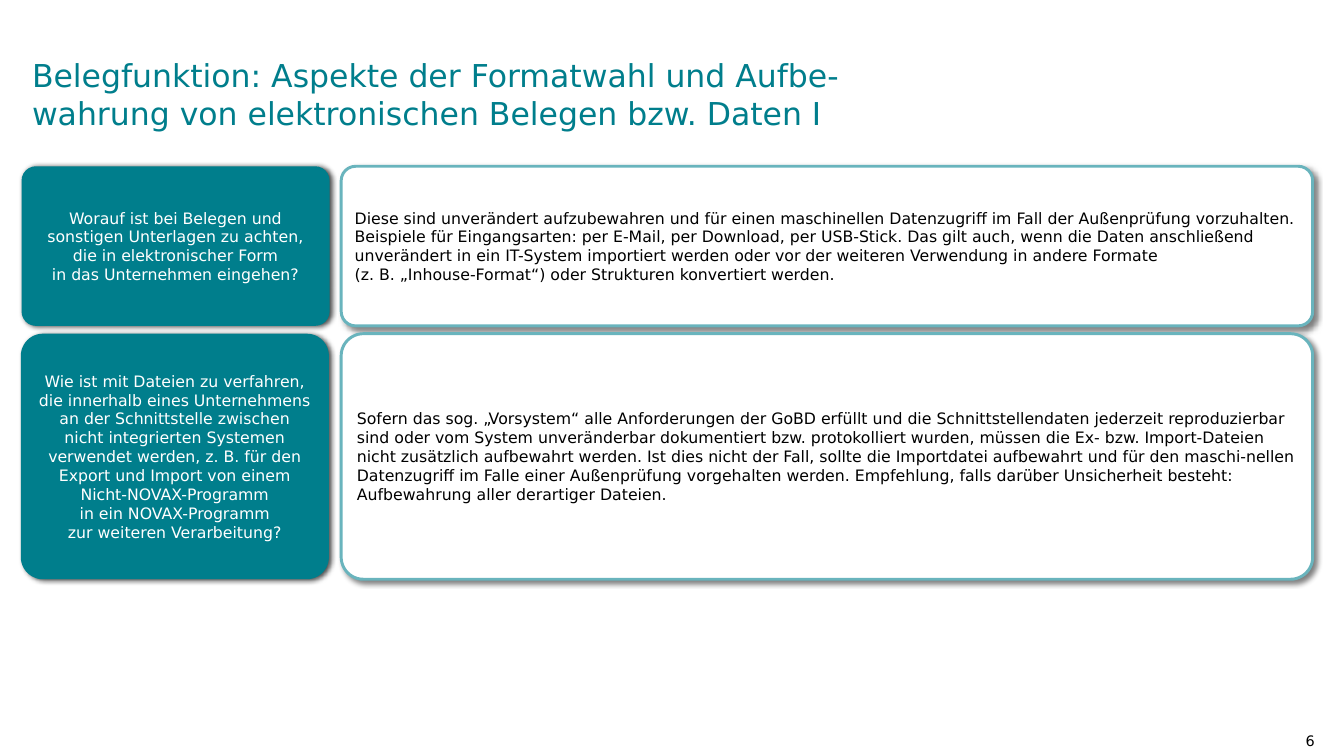
"""Build the slide on the format and retention of electronic records."""
from dataclasses import dataclass

import lxml.etree
import pptx
import pptx.dml.color
import pptx.enum.shapes
import pptx.enum.text
import pptx.oxml.ns
import pptx.util

Cm = pptx.util.Cm
RGBColor = pptx.dml.color.RGBColor
ALIGN = pptx.enum.text.PP_ALIGN
ANCHOR = pptx.enum.text.MSO_ANCHOR

TEAL = RGBColor(0x00, 0x7E, 0x8C)
LIGHT_TEAL = RGBColor(0x69, 0xB4, 0xBD)
WHITE = RGBColor(0xFF, 0xFF, 0xFF)
BLACK = RGBColor(0x00, 0x00, 0x00)
FONT = "DejaVu Sans"

QUESTION_WIDTH = 8.28
ANSWER_LEFT, ANSWER_WIDTH = 9.17, 26.11


@dataclass
class Row:
    question: list[str]
    answer: str
    left: float
    top: float
    height: float


@dataclass
class Shadow:
    alpha: int
    blur: float
    distance: float
    angle: int


QUESTION_SHADOW = Shadow(alpha=70, blur=4, distance=2, angle=20)
ANSWER_SHADOW = Shadow(alpha=50, blur=4, distance=3, angle=40)

ROWS = [
    Row(
        ["Worauf ist bei Belegen und", "sonstigen Unterlagen zu achten,",
         "die in elektronischer Form", "in das Unternehmen eingehen?"],
        "Diese sind unverändert aufzubewahren und für einen maschinellen Datenzugriff im Fall "
        "der Außenprüfung vorzuhalten. Beispiele für Eingangsarten: per E-Mail, per Download, "
        "per USB-Stick. Das gilt auch, wenn die Daten anschließend unverändert in ein IT-System "
        "importiert werden oder vor der weiteren Verwendung in andere Formate\n"
        "(z. B. „Inhouse-Format“) oder Strukturen konvertiert werden.",
        left=0.58, top=4.47, height=4.29),
    Row(
        ["Wie ist mit Dateien zu verfahren,", "die innerhalb eines Unternehmens",
         "an der Schnittstelle zwischen", "nicht integrierten Systemen",
         "verwendet werden, z. B. für den", "Export und Import von einem",
         "Nicht-NOVAX-Programm", "in ein NOVAX-Programm", "zur weiteren Verarbeitung?"],
        "Sofern das sog. „Vorsystem“ alle Anforderungen der GoBD erfüllt und die "
        "Schnittstellendaten jederzeit reproduzierbar sind oder vom System unveränderbar "
        "dokumentiert bzw. protokolliert wurden, müssen die Ex- bzw. Import-Dateien nicht "
        "zusätzlich aufbewahrt werden. Ist dies nicht der Fall, sollte die Importdatei "
        "aufbewahrt und für den maschi-nellen Datenzugriff im Falle einer Außenprüfung "
        "vorgehalten werden. Empfehlung, falls darüber Unsicherheit besteht: Aufbewahrung "
        "aller derartiger Dateien.",
        left=0.56, top=8.97, height=6.6),
]


def write(sp, *paragraphs: str, size: float = 12, color: RGBColor = BLACK,
          align=ALIGN.LEFT, anchor=ANCHOR.MIDDLE, margins=(0.25, 0.13, 0.25, 0.13)) -> None:
    tf = sp.text_frame
    tf.word_wrap = True
    tf.auto_size = pptx.enum.text.MSO_AUTO_SIZE.NONE
    tf.vertical_anchor = anchor
    tf.margin_left, tf.margin_top, tf.margin_right, tf.margin_bottom = map(Cm, margins)
    for i, text in enumerate(paragraphs):
        p = tf.paragraphs[0] if i == 0 else tf.add_paragraph()
        p.text = text
        p.alignment = align
        for r in p.runs:
            r.font.name = FONT
            r.font.size = pptx.util.Pt(size)
            r.font.color.rgb = color


def add_shadow(sp, shadow: Shadow) -> None:
    qn = pptx.oxml.ns.qn
    sp.shadow.inherit = False
    effects = sp._element.spPr.find(qn("a:effectLst"))
    outer = lxml.etree.SubElement(
        effects, qn("a:outerShdw"), blurRad=str(pptx.util.Pt(shadow.blur)),
        dist=str(pptx.util.Pt(shadow.distance)), dir=str(shadow.angle * 60000),
        algn="tl", rotWithShape="0")
    color = lxml.etree.SubElement(outer, qn("a:srgbClr"), val=str(BLACK))
    lxml.etree.SubElement(color, qn("a:alpha"), val=str(shadow.alpha * 1000))


def add_card(s, left: float, top: float, width: float, height: float,
             fill: RGBColor, shadow: Shadow, line: RGBColor | None = None):
    sp = s.shapes.add_shape(pptx.enum.shapes.MSO_SHAPE.ROUNDED_RECTANGLE,
                            Cm(left), Cm(top), Cm(width), Cm(height))
    sp.adjustments[0] = 0.09
    sp.fill.solid()
    sp.fill.fore_color.rgb = fill
    if line is None:
        sp.line.fill.background()
    else:
        sp.line.color.rgb = line
        sp.line.width = pptx.util.Pt(2.25)
    add_shadow(sp, shadow)
    return sp


def add_row(s, row: Row) -> None:
    answer = add_card(s, ANSWER_LEFT, row.top, ANSWER_WIDTH, row.height,
                      WHITE, ANSWER_SHADOW, LIGHT_TEAL)
    write(answer, row.answer)
    question = add_card(s, row.left, row.top, QUESTION_WIDTH, row.height, TEAL, QUESTION_SHADOW)
    write(question, *row.question, color=WHITE, align=ALIGN.CENTER)


def main() -> None:
    prs = pptx.Presentation()
    prs.slide_width, prs.slide_height = Cm(36.12), Cm(20.32)
    s = prs.slides.add_slide(prs.slide_layouts[5])

    title = s.shapes.title
    title.left, title.top, title.width, title.height = map(Cm, (0.86, 1.24, 24.33, 2.57))
    write(title, "Belegfunktion: Aspekte der Formatwahl und Aufbe-wahrung von "
          "elektronischen Belegen bzw. Daten I", size=24, color=TEAL, margins=(0, 0, 0.33, 0))

    for row in ROWS:
        add_row(s, row)

    number = s.shapes.add_textbox(Cm(32.77), Cm(19.53), Cm(2.9), Cm(0.53))
    write(number, "6", size=11, align=ALIGN.RIGHT, anchor=ANCHOR.TOP,
          margins=(0.33, 0.15, 0.33, 0.15))

    prs.save("out.pptx")


if __name__ == "__main__":
    main()
